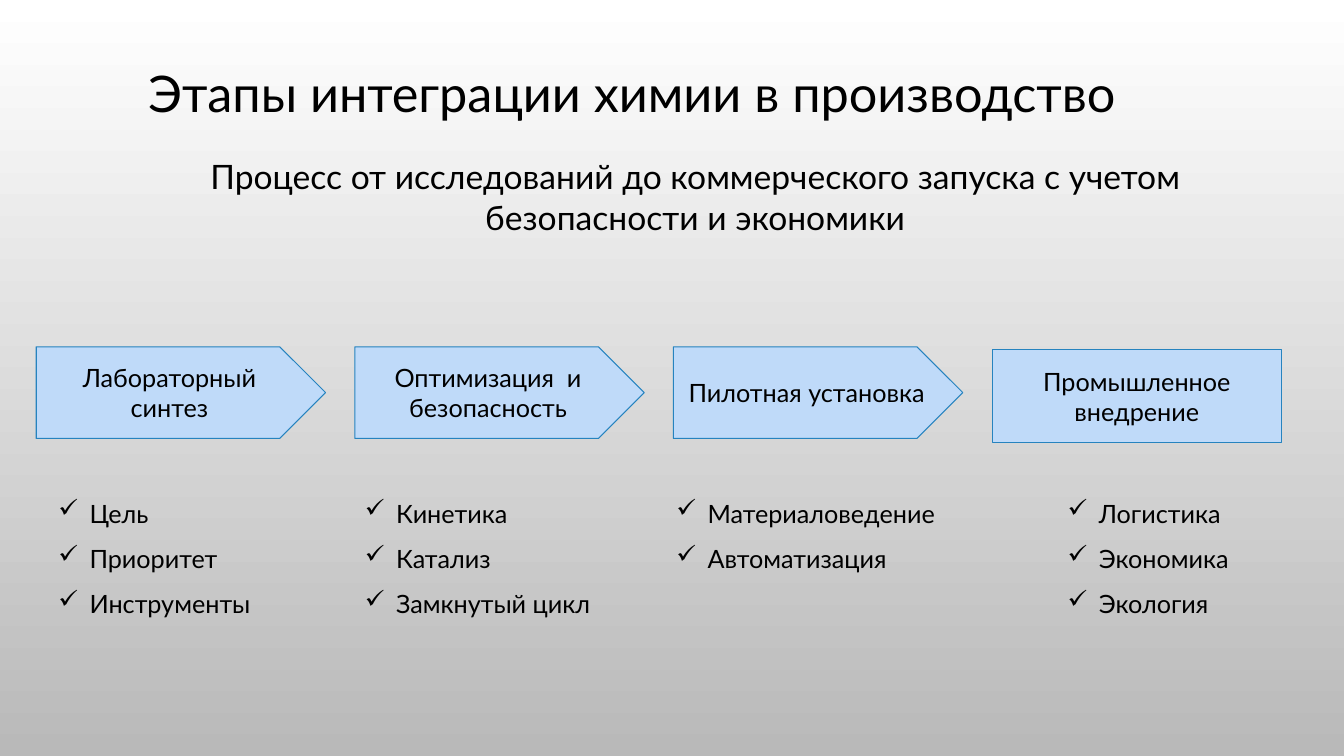
from lxml.etree import SubElement
from pptx import Presentation
from pptx.dml.color import RGBColor
from pptx.enum.shapes import MSO_SHAPE
from pptx.enum.text import MSO_ANCHOR, MSO_AUTO_SIZE, PP_ALIGN
from pptx.oxml.ns import qn
from pptx.util import Emu, Pt

EMU_PER_PX = 9144  # 100 px to the inch
FONT = "Lato"
COLORS = {"text": "000000", "fill": "BFDAF9", "line": "2683BF",
          "top": "FFFFFF", "bottom": "B9B9B9"}
INDENT = 31

STAGE_LEFT, STAGE_STEP, STAGE_WIDTH = 36, 316, 287
ARROW = (MSO_SHAPE.PENTAGON, 344, 91)
BLOCK = (MSO_SHAPE.RECTANGLE, 347, 92)
STAGES = [
    ("Лабораторный синтез", ARROW),
    ("Оптимизация  и безопасность", ARROW),
    ("Пилотная установка", ARROW),
    ("Промышленное внедрение", BLOCK),
]

LIST_TOP = 474
CHECKLISTS = [
    (48, 247, 141, ["Цель", "Приоритет", "Инструменты"]),
    (352, 244, 186, ["Кинетика", "Катализ", "Замкнутый цикл"]),
    (661, 323, 96, ["Материаловедение", "Автоматизация"]),
    (1049, 210, 142, ["Логистика", "Экономика", "Экология"]),
]


def px(*lengths):
    return [Emu(length * EMU_PER_PX) for length in lengths]


def color(name):
    return RGBColor.from_string(COLORS[name])


def add_check_bullet(paragraph):
    properties = paragraph._p.get_or_add_pPr()
    indent = px(INDENT)[0]
    properties.set("marL", str(indent))
    properties.set("indent", str(-indent))
    SubElement(properties, qn("a:buChar")).set("char", "✓")


def write_text(frame, lines, size=18, align=PP_ALIGN.LEFT, spacing=None, checked=False):
    """Fill a text frame with one paragraph for each line."""
    frame.word_wrap = True
    for index, line in enumerate(lines):
        paragraph = frame.add_paragraph() if index else frame.paragraphs[0]
        if checked:
            add_check_bullet(paragraph)
        paragraph.alignment = align
        if spacing:
            paragraph.line_spacing = spacing
        run = paragraph.add_run()
        run.text = line
        run.font.size = Pt(size)
        run.font.name = FONT
        run.font.color.rgb = color("text")


class StageSlide:
    """Holds the slide and draws its elements in one style."""

    def __init__(self, presentation):
        self.slide = presentation.slides.add_slide(presentation.slide_layouts[6])

    def background(self):
        fill = self.slide.background.fill
        fill.gradient()
        fill.gradient_angle = 270
        for stop, name, position in zip(fill.gradient_stops, ("top", "bottom"), (0, 1)):
            stop.color.rgb = color(name)
            stop.position = position

    def text(self, left, top, width, height, lines, **text_format):
        box = self.slide.shapes.add_textbox(*px(left, top, width, height))
        write_text(box.text_frame, lines, **text_format)
        box.text_frame.auto_size = MSO_AUTO_SIZE.SHAPE_TO_FIT_TEXT

    def stage(self, kind, left, top, width, height, label):
        shape = self.slide.shapes.add_shape(kind, *px(left, top, width, height))
        shape.shadow.inherit = False
        shape.fill.solid()
        shape.fill.fore_color.rgb = color("fill")
        shape.line.color.rgb = color("line")
        shape.line.width = Pt(0.75)
        shape.text_frame.vertical_anchor = MSO_ANCHOR.MIDDLE
        write_text(shape.text_frame, [label], align=PP_ALIGN.CENTER)


def main():
    presentation = Presentation()
    presentation.slide_width, presentation.slide_height = px(1333, 750)
    slide = StageSlide(presentation)
    slide.background()
    slide.text(137, 57, 1105, 71, ["Этапы интеграции химии в производство"], size=36)
    slide.text(98, 150, 1183, 91,
               ["Процесс от исследований до коммерческого запуска с учетом "
                "безопасности и экономики"], size=24, align=PP_ALIGN.CENTER)
    for index, (label, (kind, top, height)) in enumerate(STAGES):
        left = STAGE_LEFT + index * STAGE_STEP
        slide.stage(kind, left, top, STAGE_WIDTH, height, label)
    for left, width, height, items in CHECKLISTS:
        slide.text(left, LIST_TOP, width, height, items, spacing=1.5, checked=True)
    presentation.save("out.pptx")


if __name__ == "__main__":
    main()
